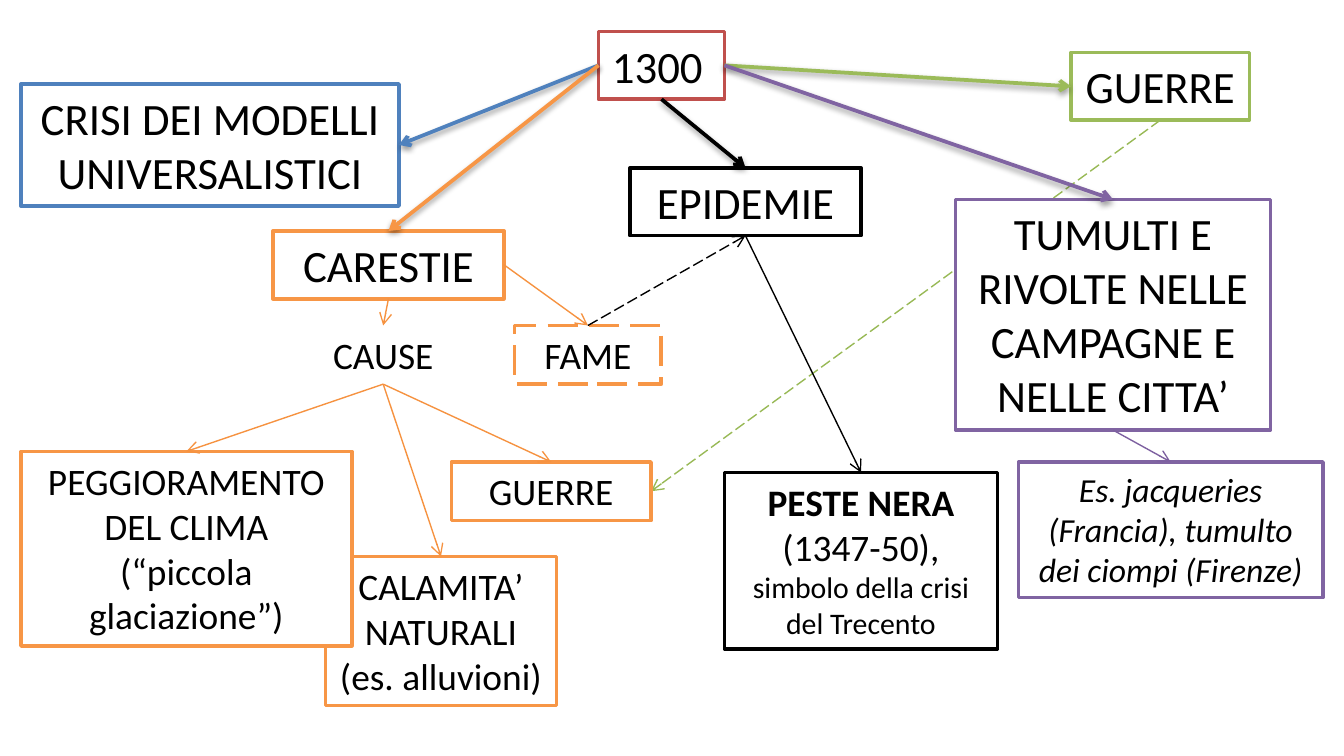
from lxml import etree
from pptx import Presentation
from pptx.dml.color import RGBColor
from pptx.enum.dml import MSO_LINE
from pptx.enum.shapes import MSO_CONNECTOR, MSO_SHAPE
from pptx.enum.text import MSO_ANCHOR, MSO_AUTO_SIZE, PP_ALIGN
from pptx.oxml.ns import qn
from pptx.util import Inches, Pt

RECT, STRAIGHT = MSO_SHAPE.RECTANGLE, MSO_CONNECTOR.STRAIGHT
DASH = MSO_LINE.LONG_DASH
LEFT, CENTER = PP_ALIGN.LEFT, PP_ALIGN.CENTER
TOP_ANCHOR = MSO_ANCHOR.TOP
GROW, FIXED = MSO_AUTO_SIZE.SHAPE_TO_FIT_TEXT, MSO_AUTO_SIZE.NONE
TOP, LEFT_SIDE, BOTTOM, RIGHT = range(4)

THEME = {
    "font": "Calibri",
    "white": "FFFFFF", "black": "000000", "red": "C0504D", "blue": "4F81BD",
    "green": "9BBB59", "purple": "8064A2", "orange": "F79646",
    "thin_green": "98B955", "thin_purple": "7D60A0", "thin_orange": "F69240",
    "head": 24, "body": 20, "example": 18, "note": 16,
    "thick": 2, "thin": 0.75,
}
W, H = 10, 5.625
COLS, ROWS = 128, 72
INSET, LEADING = 0.1, 1.212

# name: (column, row, columns wide, border, [(runs, size, lines)], format)
BOXES = {
    "year": (57, 3, 12, "red", [(["1300"], "head", 1)], {"align": LEFT, "fit": FIXED}),
    "models": (2, 8, 36, "blue", [(["CRISI DEI MODELLI UNIVERSALISTICI"], "head", 2)], {}),
    "epidemics": (60, 16, 22, "black", [(["EPIDEMIE"], "head", 1)], {}),
    "revolts": (91, 19, 30, "purple",
                [(["TUMULTI E RIVOLTE NELLE CAMPAGNE E NELLE CITTA’"], "head", 4)], {}),
    "wars": (102, 5, 17, "green", [(["GUERRE"], "head", 1)], {}),
    "famines": (26, 22, 22, "orange", [(["CARESTIE"], "head", 1)], {}),
    "disasters": (31, 53, 22, "orange", [(["CALAMITA’ NATURALI"], "body", 2),
                                         (["(es. alluvioni)"], "body", 1)], {}),
    "causes": (29, 31, 15, None, [(["CAUSE"], "body", 1)], {}),
    "hunger": (49, 31, 14, "orange", [(["FAME"], "body", 1)], {"dash": DASH}),
    "war_cause": (43, 44, 19, "orange", [(["GUERRE"], "body", 1)], {}),
    "climate": (2, 43, 31.5, "orange", [(["PEGGIORAMENTO DEL CLIMA"], "body", 2),
                                        (["(“piccola glaciazione”)"], "body", 2)], {}),
    "plague": (69, 45, 26, "black", [(["PESTE NERA ", "(1347-50),"], "body", 2),
                                     (["simbolo della crisi del Trecento"], "note", 2)],
               {"bold": "PESTE NERA "}),
    "examples": (97, 44, 29, "purple",
                 [(["Es. jacqueries (Francia), tumulto dei ciompi (Firenze)"], "example", 3)],
                 {"italic": True}),
}

# (from, side, to, side, colour, weight, dash)
ARROWS = [
    ("wars", BOTTOM, "war_cause", RIGHT, "thin_green", "thin", DASH),
    ("year", LEFT_SIDE, "models", RIGHT, "blue", "thick", None),
    ("year", LEFT_SIDE, "famines", TOP, "orange", "thick", None),
    ("year", BOTTOM, "epidemics", TOP, "black", "thick", None),
    ("year", RIGHT, "wars", LEFT_SIDE, "green", "thick", None),
    ("famines", BOTTOM, "causes", TOP, "thin_orange", "thin", None),
    ("causes", BOTTOM, "climate", TOP, "thin_orange", "thin", None),
    ("causes", BOTTOM, "disasters", TOP, "thin_orange", "thin", None),
    ("causes", BOTTOM, "war_cause", TOP, "thin_orange", "thin", None),
    ("famines", RIGHT, "hunger", TOP, "thin_orange", "thin", None),
    ("hunger", TOP, "epidemics", BOTTOM, "black", "thin", DASH),
    ("epidemics", BOTTOM, "plague", TOP, "black", "thin", None),
    ("year", RIGHT, "revolts", TOP, "purple", "thick", None),
    ("revolts", BOTTOM, "examples", TOP, "thin_purple", "thin", None),
]


def color(name):
    return RGBColor.from_string(THEME[name])


def set_line(line, name, weight, dash=None):
    line.color.rgb = color(name)
    line.width = Pt(THEME[weight])
    if dash is not None:
        line.dash_style = dash


def write(tf, paragraphs, align=CENTER, bold=None, italic=False, fit=GROW):
    tf.word_wrap = True
    tf.auto_size = fit
    tf.vertical_anchor = TOP_ANCHOR
    for i, (runs, size, _) in enumerate(paragraphs):
        p = tf.paragraphs[0] if i == 0 else tf.add_paragraph()
        p.alignment = align
        for text in runs:
            r = p.add_run()
            r.text = text
            r.font.name = THEME["font"]
            r.font.size = Pt(THEME[size])
            r.font.color.rgb = color("black")
            r.font.bold = text == bold
            r.font.italic = italic


def add_box(s, name, col, row, cols, border, paragraphs, fmt):
    height = INSET + sum(THEME[size] * n for _, size, n in paragraphs) * LEADING / 72
    place = [Inches(v) for v in (col * W / COLS, row * H / ROWS, cols * W / COLS, height)]
    if name == "year":
        sp = s.shapes.title
        sp.left, sp.top, sp.width, sp.height = place
    elif border:
        sp = s.shapes.add_shape(RECT, *place)
        sp.shadow.inherit = False
    else:
        sp = s.shapes.add_textbox(*place)
    if border:
        sp.fill.solid()
        sp.fill.fore_color.rgb = color("white")
        set_line(sp.line, border, "thick", fmt.get("dash"))
    write(sp.text_frame, paragraphs, **{k: v for k, v in fmt.items() if k != "dash"})
    return sp


def add_arrow(s, start, start_side, end, end_side, name, weight, dash):
    c = s.shapes.add_connector(STRAIGHT, 0, 0, 0, 0)
    c.begin_connect(start, start_side)
    c.end_connect(end, end_side)
    set_line(c.line, name, weight, dash)
    etree.SubElement(c.line._get_or_add_ln(), qn("a:tailEnd"), type="arrow")
    effects = etree.SubElement(c._element.spPr, qn("a:effectLst"))
    if weight == "thick":
        shadow = etree.SubElement(effects, qn("a:outerShdw"), blurRad="40000",
                                  dist="20000", dir="5400000", rotWithShape="0")
        tint = etree.SubElement(shadow, qn("a:srgbClr"), val=THEME["black"])
        etree.SubElement(tint, qn("a:alpha"), val="38000")
    return c


def main():
    prs = Presentation()
    prs.slide_width, prs.slide_height = Inches(W), Inches(H)
    s = prs.slides.add_slide(prs.slide_layouts[5])
    boxes = {name: add_box(s, name, *box) for name, box in BOXES.items()}
    arrows = [add_arrow(s, boxes[a], a_side, boxes[b], b_side, *style)
              for a, a_side, b, b_side, *style in ARROWS]
    boxes["year"]._element.addprevious(arrows[0]._element)
    prs.save("out.pptx")


if __name__ == "__main__":
    main()
